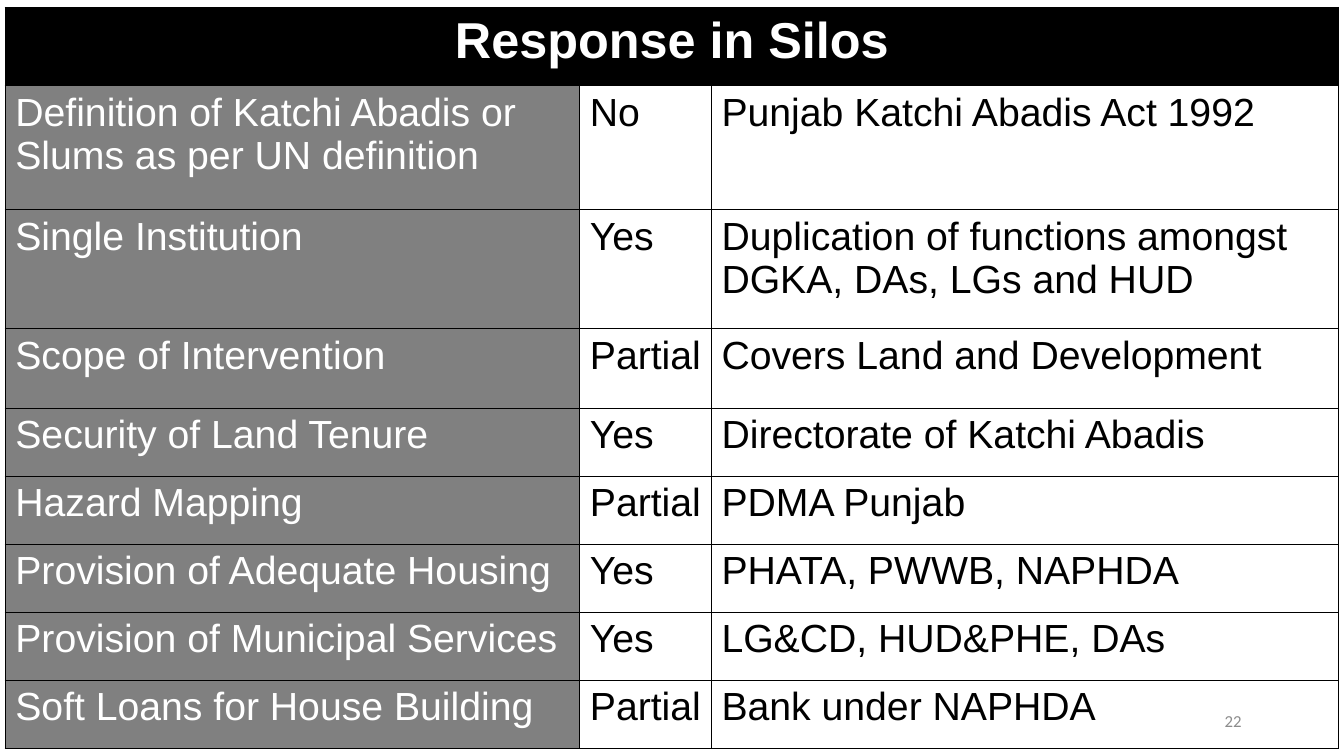
from pptx import Presentation
from pptx.dml.color import RGBColor
from pptx.enum.text import MSO_ANCHOR, PP_ALIGN
from pptx.oxml import parse_xml
from pptx.oxml.ns import nsdecls
from pptx.util import Pt

BLACK = RGBColor(0x00, 0x00, 0x00)
WHITE = RGBColor(0xFF, 0xFF, 0xFF)
GRAY = RGBColor(0x80, 0x80, 0x80)
NUMBER_GRAY = RGBColor(0x8C, 0x8C, 0x8C)

# Content: measure, status, remark, row height
HEADING = "Response in Silos"
HEADING_HEIGHT = 56
MEASURES = [
    ("Definition of Katchi Abadis or Slums as per UN definition", "No",
     "Punjab Katchi Abadis Act 1992", 88.5),
    ("Single Institution", "Yes",
     "Duplication of functions amongst DGKA, DAs, LGs and HUD", 85),
    ("Scope of Intervention", "Partial", "Covers Land and Development", 57),
    ("Security of Land Tenure", "Yes", "Directorate of Katchi Abadis", 48.6),
    ("Hazard Mapping", "Partial", "PDMA Punjab", 48.6),
    ("Provision of Adequate Housing", "Yes", "PHATA, PWWB, NAPHDA", 48.6),
    ("Provision of Municipal Services", "Yes", "LG&CD, HUD&PHE, DAs", 48.6),
    ("Soft Loans for House Building", "Partial", "Bank under NAPHDA", 48.6),
]
COLUMN_WIDTHS = [410.4, 94, 448]
SLIDE_NUMBER = "22"


def style_text(paragraph, size, color, font="Arial", bold=False, align=PP_ALIGN.LEFT):
    paragraph.alignment = align
    paragraph.font.name = font
    paragraph.font.size = Pt(size)
    paragraph.font.bold = bold
    paragraph.font.color.rgb = color


def fill_cell(cell, text, fill, size, color, **style):
    cell.text = text
    style_text(cell.text_frame.paragraphs[0], size, color, **style)
    cell.fill.solid()
    cell.fill.fore_color.rgb = fill


def add_borders(cell):
    properties = cell._tc.get_or_add_tcPr()
    for position, side in enumerate(("lnL", "lnR", "lnT", "lnB")):
        properties.insert(position, parse_xml(
            f'<a:{side} {nsdecls("a")} w="{Pt(1)}"><a:solidFill>'
            f'<a:srgbClr val="{BLACK}"/></a:solidFill></a:{side}>'))


prs = Presentation()
prs.slide_width, prs.slide_height = Pt(960), Pt(540)
slide = prs.slides.add_slide(prs.slide_layouts[6])

# Table grid
heights = [HEADING_HEIGHT] + [measure[-1] for measure in MEASURES]
responses = slide.shapes.add_table(
    len(heights), len(COLUMN_WIDTHS), Pt(3.8), Pt(5.3),
    Pt(sum(COLUMN_WIDTHS)), Pt(sum(heights))).table
for column, width in zip(responses.columns, COLUMN_WIDTHS):
    column.width = Pt(width)
for row, height in zip(responses.rows, heights):
    row.height = Pt(height)

# Heading row
heading = responses.cell(0, 0)
heading.merge(responses.cell(0, 2))
fill_cell(heading, HEADING, BLACK, 36, WHITE, bold=True, align=PP_ALIGN.CENTER)

# Measures, with the first column shaded
for r, (*texts, _) in enumerate(MEASURES, start=1):
    for c, text in enumerate(texts):
        fill, color = (GRAY, WHITE) if c == 0 else (WHITE, BLACK)
        fill_cell(responses.cell(r, c), text, fill, 28, color)

for cell in responses.iter_cells():
    add_borders(cell)

# Slide number
number = slide.shapes.add_textbox(Pt(678), Pt(500.5), Pt(216), Pt(28.75)).text_frame
number.word_wrap = True
number.vertical_anchor = MSO_ANCHOR.MIDDLE
number.text = SLIDE_NUMBER
style_text(number.paragraphs[0], 12, NUMBER_GRAY, font="Calibri", align=PP_ALIGN.RIGHT)

prs.save("out.pptx")
